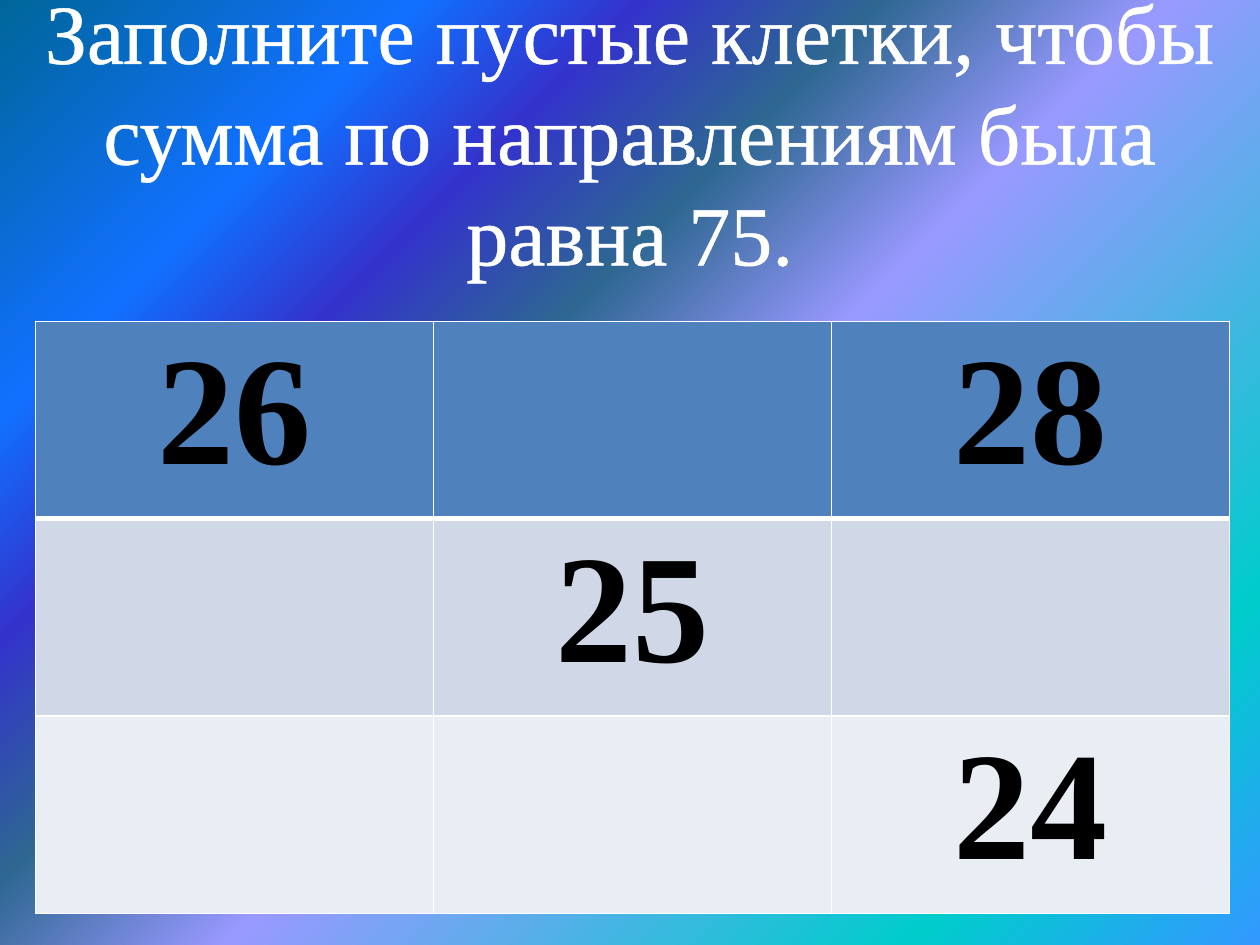
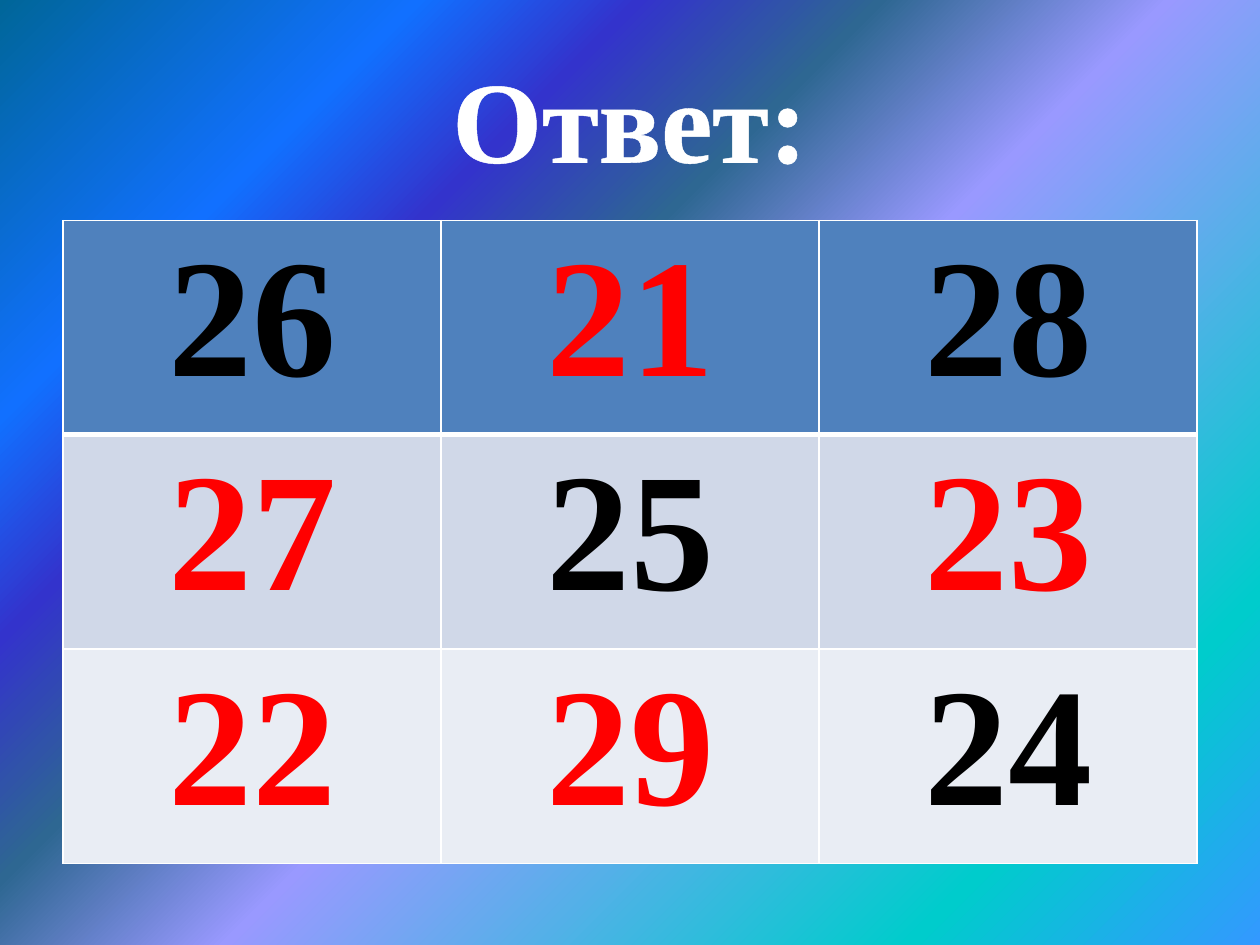
from dataclasses import dataclass
from typing import Any

from pptx import Presentation
from pptx.dml.color import RGBColor
from pptx.enum.text import MSO_ANCHOR as Anchor, PP_ALIGN as Align
from pptx.oxml import parse_xml
from pptx.oxml.ns import nsdecls, qn
from pptx.util import Emu, Pt

EMU_PER_PX = 9144
FONT = "Times New Roman"
COLORS = {
    "white": "FFFFFF", "given": "000000", "answer": "FF0000",
    "header": "4F81BD", "odd": "D0D8E8", "even": "E9EDF4",
}
ROW_FILLS = ("header", "odd", "even")
BACKDROP = {
    0: "3399FF", 16: "00CCCC", 47: "9999FF", 60: "2E6792",
    71: "3333CC", 81: "1170FF", 100: "006699",
}
GIVEN = {"26", "28", "25", "24"}
THIN, THICK = 1, 3


@dataclass(frozen=True)
class Frame:
    """A place on the page in px."""
    left: int
    top: int
    width: int
    height: int

    def emu(self) -> list[Emu]:
        """Return the four lengths in EMU."""
        return [px(n) for n in (self.left, self.top, self.width, self.height)]


@dataclass(frozen=True)
class Puzzle:
    """A titled magic square."""
    title: str
    title_frame: Frame
    title_font: dict[str, Any]
    square_frame: Frame
    number_size: int
    rows: tuple[tuple[str, ...], ...]


PUZZLES = (
    Puzzle("Заполните пустые клетки, чтобы сумма по направлениям была равна 75.",
           Frame(0, 30, 1000, 148), {"size": Pt(48), "bold": False},
           Frame(28, 255, 948, 459), 88,
           (("26", "", "28"), ("", "25", ""), ("", "", "24"))),
    Puzzle("Ответ:",
           Frame(50, 30, 900, 125), {"size": Pt(66), "bold": True},
           Frame(50, 175, 900, 471), 96,
           (("26", "21", "28"), ("27", "25", "23"), ("22", "29", "24"))),
)


def px(length: int) -> Emu:
    """Turn px into EMU."""
    return Emu(length * EMU_PER_PX)


def apply(target: Any, values: dict[str, Any]) -> None:
    """Set attributes from a dict of format values."""
    for name, value in values.items():
        setattr(target, name, value)


def line_xml(tag: str, points: float) -> Any:
    """Make a white line element."""
    return parse_xml(
        f'<a:{tag} {nsdecls("a")} w="{int(Pt(points))}"><a:solidFill>'
        f'<a:srgbClr val="{COLORS["white"]}"/></a:solidFill></a:{tag}>')


def write(para: Any, text: str, color: str, font: dict[str, Any]) -> Any:
    """Add a centred span of text."""
    para.alignment = Align.CENTER
    span = para.add_run()
    span.text = text
    apply(span.font, {"name": FONT, **font})
    span.font.color.rgb = RGBColor.from_string(COLORS[color])
    return span


def paint_backdrop(page: Any) -> None:
    """Fill the page with a gradient spreading from the bottom right corner."""
    stops = "".join(f'<a:gs pos="{pos * 1000}"><a:srgbClr val="{color}"/></a:gs>'
                    for pos, color in BACKDROP.items())
    page.element.find(qn("p:cSld")).insert(0, parse_xml(
        f'<p:bg {nsdecls("p", "a")}><p:bgPr><a:gradFill><a:gsLst>{stops}</a:gsLst>'
        '<a:path path="circle"><a:fillToRect l="100000" t="100000"/></a:path>'
        '</a:gradFill><a:effectLst/></p:bgPr></p:bg>'))


def add_title(page: Any, puzzle: Puzzle) -> None:
    """Add the white outlined title."""
    box = page.shapes.add_textbox(*puzzle.title_frame.emu())
    apply(box.text_frame, {"word_wrap": True, "vertical_anchor": Anchor.MIDDLE})
    span = write(box.text_frame.paragraphs[0], puzzle.title, "white", puzzle.title_font)
    span.font._element.insert(0, line_xml("ln", 1.45))


def add_square(page: Any, puzzle: Puzzle) -> None:
    """Add the number square as a table."""
    count = len(puzzle.rows)
    table = page.shapes.add_table(count, count, *puzzle.square_frame.emu()).table
    for row, numbers in enumerate(puzzle.rows):
        for column, number in enumerate(numbers):
            cell = table.cell(row, column)
            borders = {"lnL": THIN, "lnR": THIN,
                       "lnT": THICK if row == 1 else THIN,
                       "lnB": THICK if row == 0 else THIN}
            properties = cell._tc.get_or_add_tcPr()
            for tag, points in borders.items():
                properties.append(line_xml(tag, points))
            cell.fill.solid()
            cell.fill.fore_color.rgb = RGBColor.from_string(COLORS[ROW_FILLS[row]])
            if number:
                write(cell.text_frame.paragraphs[0], number,
                      "given" if number in GIVEN else "answer",
                      {"size": Pt(puzzle.number_size), "bold": True})


def main() -> None:
    """Build the deck."""
    deck = Presentation()
    apply(deck, {"slide_width": px(1000), "slide_height": px(750)})
    for puzzle in PUZZLES:
        page = deck.slides.add_slide(deck.slide_layouts[6])
        paint_backdrop(page)
        add_title(page, puzzle)
        add_square(page, puzzle)
    deck.save("out.pptx")


if __name__ == "__main__":
    main()
